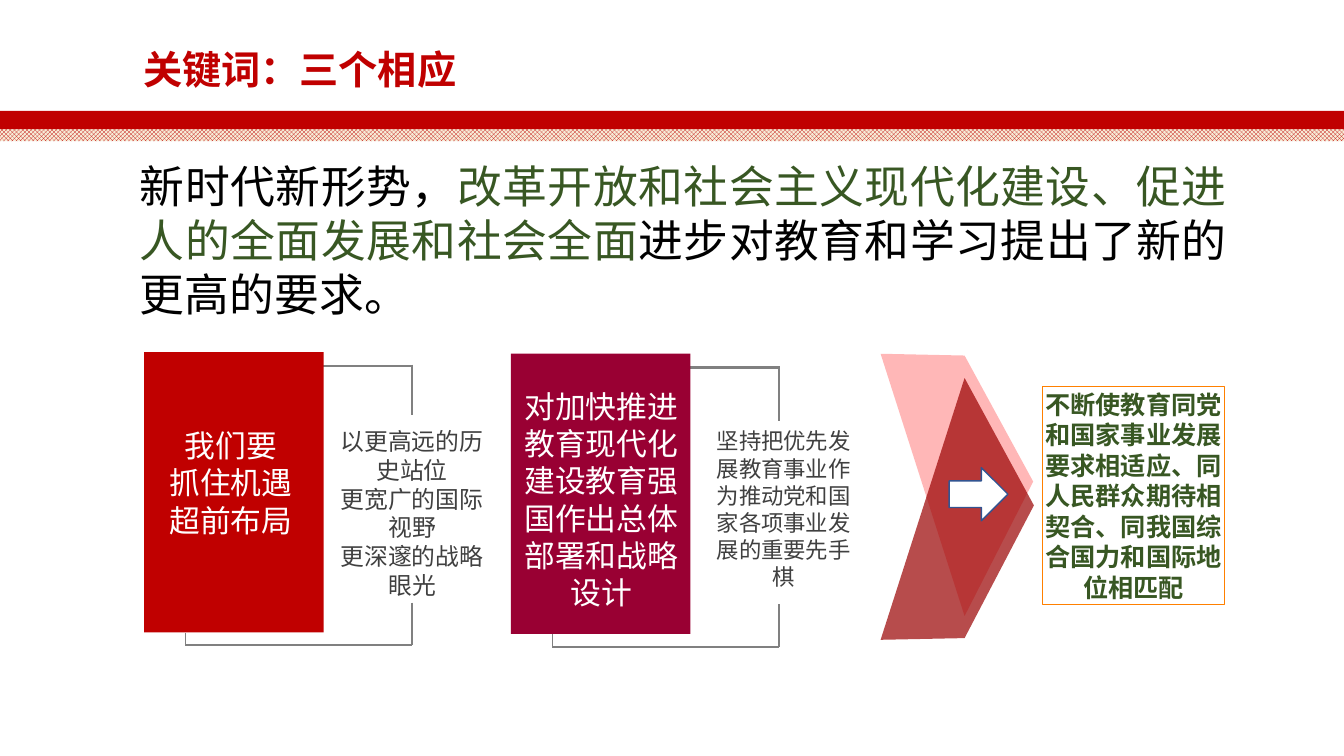
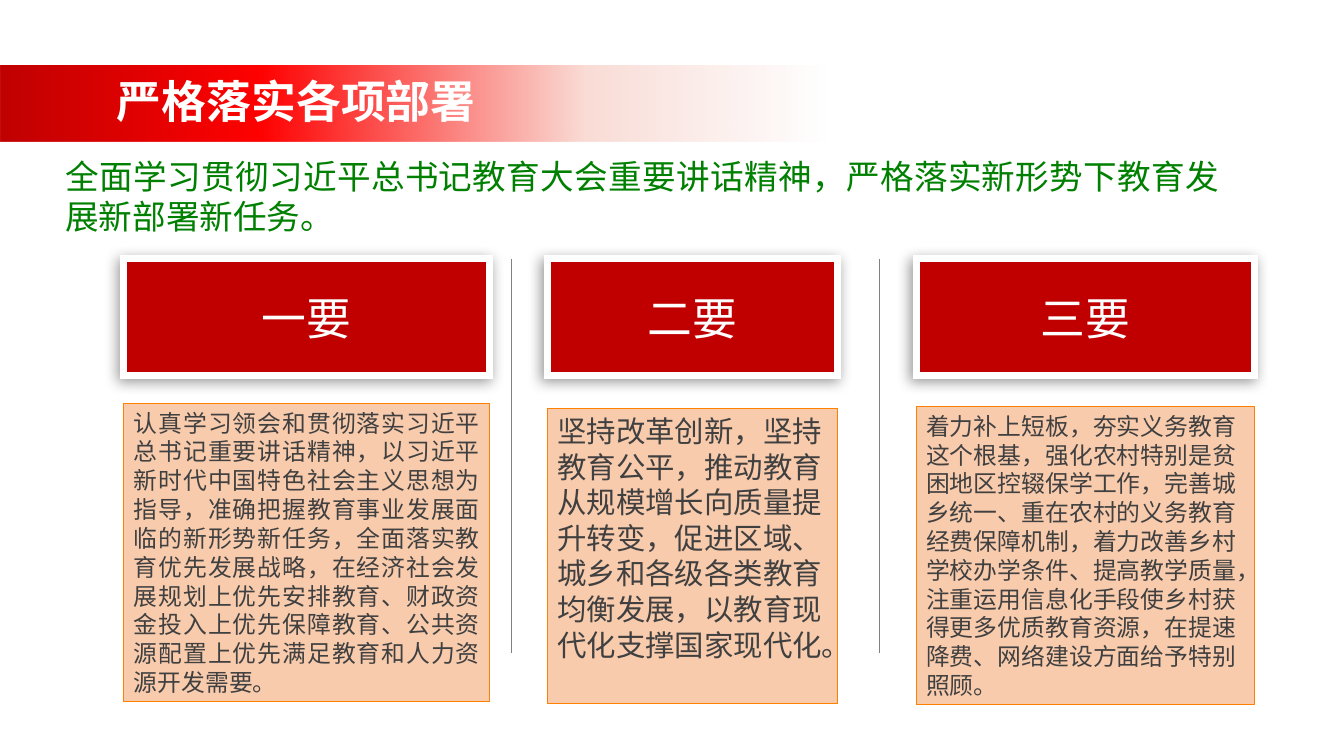
from dataclasses import dataclass
from typing import Optional

from lxml.etree import SubElement
from pptx import Presentation
from pptx.dml.color import RGBColor
from pptx.enum.dml import MSO_PATTERN_TYPE as Pattern
from pptx.enum.shapes import MSO_CONNECTOR as Connector, MSO_SHAPE as Shape
from pptx.enum.text import MSO_ANCHOR as Anchor, PP_ALIGN as Align
from pptx.oxml.ns import qn
from pptx.util import Pt

COLORS = {
    "red": "C00000",
    "crimson": "990033",
    "bright_red": "FF0000",
    "dark_red": "990000",
    "pink": "FF9999",
    "blush": "FADDD6",
    "blush_end": "FADEDA",
    "cream": "F7EDD8",
    "peach": "F8CBAD",
    "orange": "FF8000",
    "olive": "385723",
    "green": "008000",
    "blue": "325491",
    "gray": "808080",
    "text": "404040",
    "black": "000000",
    "white": "FFFFFF",
}
SC, JP, TITLE_FONT = "Noto Sans CJK SC", "Noto Sans CJK JP", "Arial"
SLIDE_WIDTH, SLIDE_HEIGHT = 960, 540
LINE_HEIGHT = 1.21  # line pitch as a multiple of the text size


@dataclass(frozen=True)
class Box:
    left: float
    top: float
    width: float
    height: float

    def points(self) -> tuple:
        return Pt(self.left), Pt(self.top), Pt(self.width), Pt(self.height)


@dataclass(frozen=True)
class Panel:
    left: float
    top: float
    color: str
    label: str
    label_box: Box
    detail: str
    detail_box: Box
    detail_size: float
    upper_stub: float


@dataclass(frozen=True)
class Card:
    heading: str
    left: float
    width: float
    body: str
    body_top: float
    body_height: float
    body_size: float
    align: Align = Align.LEFT


PANELS = [
    Panel(103, 251.5, "red", "我们要\n抓住机遇超前布局", Box(106.6, 301, 116.6, 87),
          "以更高远的历史站位\n更宽广的国际视野\n更深邃的战略眼光",
          Box(231, 301, 126.7, 131), 17, 36),
    Panel(365, 252.5, "crimson", "对加快推进教育现代化\n建设教育强国作出总体部署和战略设计",
          Box(366.5, 273, 126, 167),
          "坚持把优先发展教育事业作为推动党和国家各项事业发展的重要先手棋",
          Box(504, 301.7, 111.6, 124), 16, 39),
]

CARDS = [
    Card("一要", 88.5, 261.4,
         "认真学习领会和贯彻落实习近平总书记重要讲话精神，以习近平新时代中国特色社会主义思想为指导，"
         "准确把握教育事业发展面临的新形势新任务，全面落实教育优先发展战略，"
         "在经济社会发展规划上优先安排教育、财政资金投入上优先保障教育、"
         "公共资源配置上优先满足教育和人力资源开发需要。",
         288, 213, 17, Align.JUSTIFY),
    Card("二要", 391, 207.4,
         "坚持改革创新，坚持教育公平，推动教育从规模增长向质量提升转变，"
         "促进区域、城乡和各级各类教育均衡发展，以教育现代化支撑国家现代化。",
         291.5, 211, 21),
    Card("三要", 654.5, 241.9,
         "着力补上短板，夯实义务教育这个根基，强化农村特别是贫困地区控辍保学工作，"
         "完善城乡统一、重在农村的义务教育经费保障机制，着力改善乡村学校办学条件、提高教学质量，"
         "注重运用信息化手段使乡村获得更多优质教育资源，在提速降费、网络建设方面给予特别照顾。",
         290.2, 213, 17),
]


def rgb(name: str) -> RGBColor:
    return RGBColor.from_string(COLORS[name])


def add_color(parent, name: str, alpha: Optional[int] = None) -> None:
    """Append an XML colour with an optional opacity in percent."""
    color = SubElement(parent, qn("a:srgbClr"), val=COLORS[name])
    if alpha is not None:
        SubElement(color, qn("a:alpha"), val=str(alpha * 1000))


def write(shape, text: str, *, size: float, color: str, font: str = SC, bold: bool = False,
          align: Align = Align.LEFT, anchor: Anchor = Anchor.TOP,
          insets: tuple = (7.2, 3.6), highlight: str = "", highlight_color: str = "olive") -> None:
    """Fill a shape with text, one paragraph a line, and colour the highlighted phrase."""
    frame = shape.text_frame
    frame.word_wrap = True
    frame.vertical_anchor = anchor
    frame.margin_left = frame.margin_right = Pt(insets[0])
    frame.margin_top = frame.margin_bottom = Pt(insets[1])
    for index, line in enumerate(text.split("\n")):
        paragraph = frame.add_paragraph() if index else frame.paragraphs[0]
        paragraph.alignment = align
        paragraph.line_spacing = Pt(size * LINE_HEIGHT)
        for part in line.partition(highlight) if highlight else (line,):
            marked = bool(highlight) and part == highlight
            run = paragraph.add_run()
            run.text = part
            run.font.size, run.font.bold = Pt(size), bold
            run.font.color.rgb = rgb(highlight_color if marked else color)
            run.font.name = SC if marked else font
            SubElement(run._r.get_or_add_rPr(), qn("a:ea"), typeface=run.font.name)


def add_text(slide, box: Box, text: str, **style) -> None:
    write(slide.shapes.add_textbox(*box.points()), text, **style)


def style_shape(shape, fill: Optional[str], line: Optional[str], line_width: float) -> None:
    shape.shadow.inherit = False
    if fill:
        shape.fill.solid()
        shape.fill.fore_color.rgb = rgb(fill)
    else:
        shape.fill.background()
    if line:
        shape.line.color.rgb = rgb(line)
        shape.line.width = Pt(line_width)
    else:
        shape.line.fill.background()


def add_box(slide, box: Box, fill: Optional[str] = None, line: Optional[str] = None,
            line_width: float = 1, kind: Shape = Shape.RECTANGLE):
    shape = slide.shapes.add_shape(kind, *box.points())
    style_shape(shape, fill, line, line_width)
    return shape


def add_line(slide, x1: float, y1: float, x2: float, y2: float, width: float = 1.5) -> None:
    line = slide.shapes.add_connector(Connector.STRAIGHT, Pt(x1), Pt(y1), Pt(x2), Pt(y2))
    line.line.color.rgb = rgb("gray")
    line.line.width = Pt(width)
    SubElement(line.element.spPr, qn("a:effectLst"))


def set_title(slide, box: Box, text: str, **style) -> None:
    """Place the title placeholder in front of everything drawn so far."""
    title = slide.shapes.title
    title.left, title.top, title.width, title.height = box.points()
    write(title, text, bold=True, anchor=Anchor.MIDDLE, **style)
    slide.shapes.element.append(title.element)


def add_header_bands(slide) -> None:
    trellis = add_box(slide, Box(0, 91.5, SLIDE_WIDTH, 9.4), "red")
    trellis.fill.patterned()
    trellis.fill.pattern = Pattern.TRELLIS
    trellis.fill.fore_color.rgb = rgb("red")
    trellis.fill.back_color.rgb = rgb("cream")
    add_box(slide, Box(0, 79.2, SLIDE_WIDTH, 13), "red")


def add_gradient_band(slide) -> None:
    band = add_box(slide, Box(0.5, 46.8, 614, 54), "red")
    band.fill.gradient()
    band.fill.gradient_angle = 0
    stops = next(band.element.iter(qn("a:gsLst")))
    for stop in list(stops):
        stops.remove(stop)
    for position, color, alpha in ((0, "red", None), (30, "bright_red", None),
                                   (68, "blush", None), (96, "blush_end", 0)):
        add_color(SubElement(stops, qn("a:gs"), pos=str(position * 1000)), color, alpha)


def add_panel(slide, panel: Panel) -> None:
    """Draw a coloured block with a bracket around its detail text."""
    left, right = panel.left + 29.5, panel.left + 191.5
    top, bottom = panel.top + 10, panel.top + 209.5
    add_line(slide, panel.left + 115, top, right, top)
    add_line(slide, left, bottom, right, bottom)
    add_line(slide, left, bottom - 9, left, bottom, 0.5)
    add_line(slide, right, bottom - 30.5, right, bottom)
    add_line(slide, right, top - 1, right, top - 1 + panel.upper_stub)
    add_text(slide, panel.detail_box, panel.detail, size=panel.detail_size,
             color="text", align=Align.CENTER)
    add_box(slide, Box(panel.left, panel.top, 128.2, 200.2), panel.color)
    add_text(slide, panel.label_box, panel.label, size=22, color="white", align=Align.CENTER)


def add_translucent_outline(slide, points: list, color: str) -> None:
    start, *rest = [(Pt(x), Pt(y)) for x, y in points]
    builder = slide.shapes.build_freeform(*start, scale=1.0)
    builder.add_line_segments(rest, close=True)
    shape = builder.convert_to_shape()
    style_shape(shape, color, None, 0)
    SubElement(next(shape.element.spPr.iter(qn("a:srgbClr"))), qn("a:alpha"), val="70000")


def add_card(slide, card: Card) -> None:
    heading = add_box(slide, Box(card.left, 185, card.width, 83), "red", "white", 5)
    SubElement(next(heading.element.spPr.iter(qn("a:ln"))), qn("a:miter"), lim="800000")
    effects = next(heading.element.spPr.iter(qn("a:effectLst")))
    shadow = SubElement(effects, qn("a:outerShdw"), blurRad=str(Pt(10)), dist=str(Pt(3)),
                        dir=str(135 * 60000), algn="tr", rotWithShape="0")
    add_color(shadow, "black", 40)
    write(heading, card.heading, size=32, color="white", align=Align.CENTER, anchor=Anchor.MIDDLE)
    body = add_box(slide, Box(card.left, card.body_top, card.width, card.body_height),
                   "peach", "orange", 0.75)
    write(body, card.body, size=card.body_size, color="text", align=card.align)


def build_keyword_slide(slide) -> None:
    add_header_bands(slide)
    add_text(slide, Box(92.9, 109.5, 790.6, 123.8),
             "新时代新形势，改革开放和社会主义现代化建设、促进人的全面发展和社会全面"
             "进步对教育和学习提出了新的更高的要求。",
             size=32, color="black", font=JP, align=Align.JUSTIFY,
             highlight="改革开放和社会主义现代化建设、促进人的全面发展和社会全面")
    for panel in PANELS:
        add_panel(slide, panel)
    add_translucent_outline(slide, [(629, 252.7), (689, 440), (738, 344), (689, 254)], "pink")
    add_translucent_outline(slide, [(629, 457), (689, 270), (738.5, 361), (689, 455.8)], "dark_red")
    result = add_box(slide, Box(744.5, 276.2, 130.3, 155.5), line="orange")
    write(result, "不断使教育同党和国家事业发展要求相适应、同人民群众期待相契合、同我国综合国力和国际地位相匹配",
          size=18, color="olive", font=JP, bold=True, align=Align.CENTER,
          anchor=Anchor.MIDDLE, insets=(0, 0))
    add_box(slide, Box(678, 334, 42, 38), "white", "blue", kind=Shape.RIGHT_ARROW)
    set_title(slide, Box(95, 31.7, 301, 35.3), "关键词：三个相应", size=28, color="red")


def build_tasks_slide(slide) -> None:
    for x in (365.3, 628):
        add_line(slide, x, 185, x, 466.5, 0.25)
    for card in CARDS:
        add_card(slide, card)
    add_gradient_band(slide)
    set_title(slide, Box(74.2, 49, 275, 46), "严格落实各项部署", size=32, color="white",
              font=TITLE_FONT, align=Align.CENTER)
    add_text(slide, Box(39.6, 107.3, 838.8, 65.5),
             "全面学习贯彻习近平总书记教育大会重要讲话精神，严格落实新形势下教育发展新部署新任务。",
             size=24, color="green", align=Align.JUSTIFY)


def main() -> None:
    presentation = Presentation()
    presentation.slide_width, presentation.slide_height = Pt(SLIDE_WIDTH), Pt(SLIDE_HEIGHT)
    title_only = presentation.slide_layouts[5]
    for build in (build_keyword_slide, build_tasks_slide):
        build(presentation.slides.add_slide(title_only))
    presentation.save("out.pptx")


if __name__ == "__main__":
    main()
